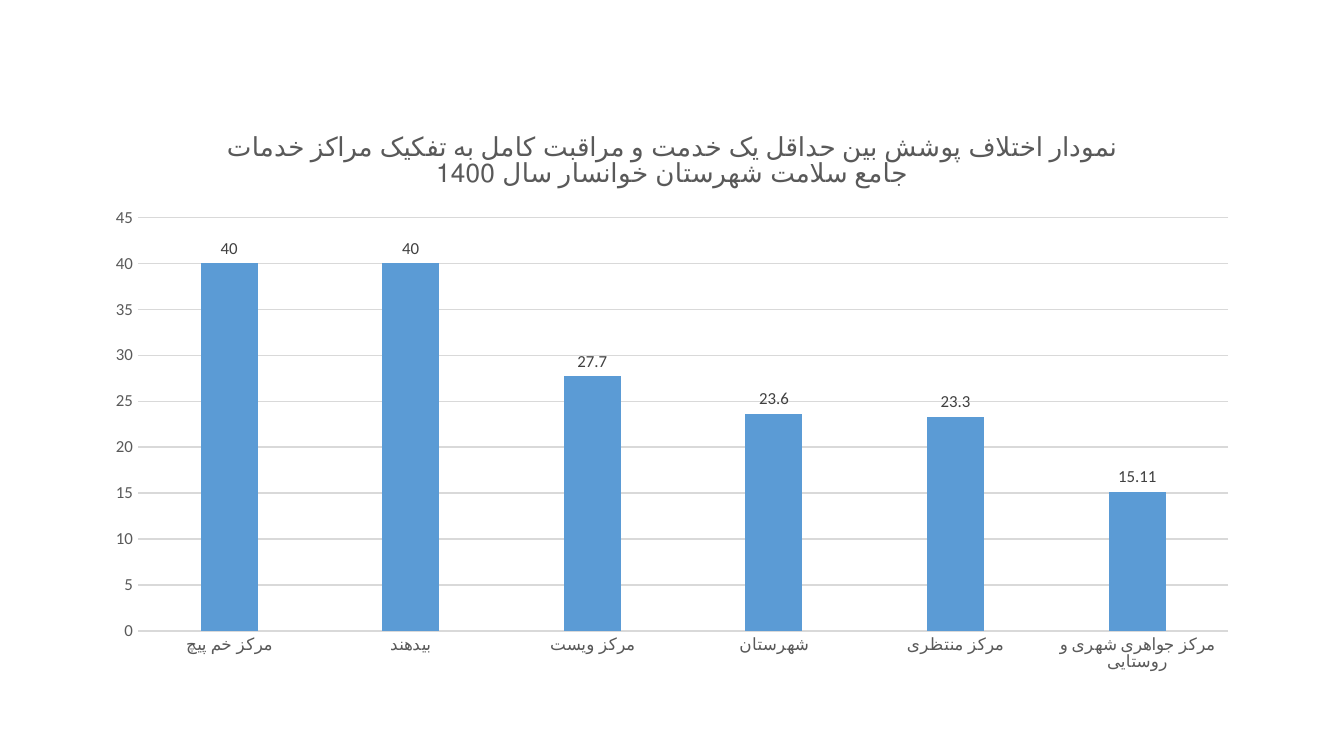
from pptx import Presentation
from pptx import util as u
from pptx.chart.data import CategoryChartData
from pptx.dml.color import RGBColor
from pptx.enum import chart as ch

FONT = "Calibri"
BLUE = RGBColor(0x5B, 0x9B, 0xD5)
GRID = RGBColor(0xD9, 0xD9, 0xD9)
GREY = RGBColor(0x59, 0x59, 0x59)
DARK = RGBColor(0x40, 0x40, 0x40)
BLACK = RGBColor(0, 0, 0)

TITLE = ("نمودار اختلاف پوشش بین حداقل یک خدمت و مراقبت کامل به تفکیک "
         "مراکز خدمات جامع سلامت شهرستان خوانسار سال 1400")
COVERAGE_GAPS = {
    "مرکز خم پیچ": 40,
    "بیدهند": 40,
    "مرکز ویست": 27.7,
    "شهرستان": 23.6,
    "مرکز منتظری": 23.3,
    "مرکز جواهری شهری و روستایی": 15.11,
}


def set_font(font, size, color):
    font.name = FONT
    font.size = u.Pt(size)
    font.bold = False
    font.color.rgb = color


def set_line(line):
    line.color.rgb = GRID
    line.width = u.Pt(0.75)


def add_column_chart(s):
    data = CategoryChartData()
    data.categories = list(COVERAGE_GAPS)
    data.add_series(TITLE, list(COVERAGE_GAPS.values()))
    frame = s.shapes.add_chart(
        ch.XL_CHART_TYPE.COLUMN_CLUSTERED, u.Inches(0.69), u.Inches(0.81),
        u.Inches(8.62), u.Inches(4.26), data)
    chart = frame.chart
    set_font(chart.font, 10, BLACK)
    chart.has_legend = False
    return chart


def add_title(chart):
    chart.has_title = True
    chart.chart_title.include_in_layout = False
    p = chart.chart_title.text_frame.paragraphs[0]
    r = p.add_run()
    r.text = TITLE
    set_font(r.font, 14, GREY)


def format_axes(chart):
    for axis in (chart.category_axis, chart.value_axis):
        axis.major_tick_mark = ch.XL_TICK_MARK.NONE
        axis.minor_tick_mark = ch.XL_TICK_MARK.NONE
        set_font(axis.tick_labels.font, 9, GREY)
    set_line(chart.category_axis.format.line)

    values = chart.value_axis
    values.minimum_scale, values.maximum_scale = 0, 45
    values.major_unit = 5
    values.format.line.fill.background()
    values.has_major_gridlines = True
    set_line(values.major_gridlines.format.line)


def format_columns(chart):
    plot = chart.plots[0]
    plot.vary_by_categories = False
    plot.gap_width = 219
    plot.overlap = -27
    series = plot.series[0]
    series.format.fill.solid()
    series.format.fill.fore_color.rgb = BLUE
    series.invert_if_negative = False

    labels = series.data_labels
    labels.show_value = True
    labels.position = ch.XL_LABEL_POSITION.OUTSIDE_END
    set_font(labels.font, 9, DARK)


def main():
    # Widescreen slide, 16:9
    prs = Presentation()
    prs.slide_width = u.Inches(10)
    prs.slide_height = u.Inches(10) * 9 // 16
    s = prs.slides.add_slide(prs.slide_layouts[6])

    # Coverage gap by health centre
    chart = add_column_chart(s)
    add_title(chart)
    format_axes(chart)
    format_columns(chart)

    prs.save("out.pptx")


if __name__ == "__main__":
    main()
